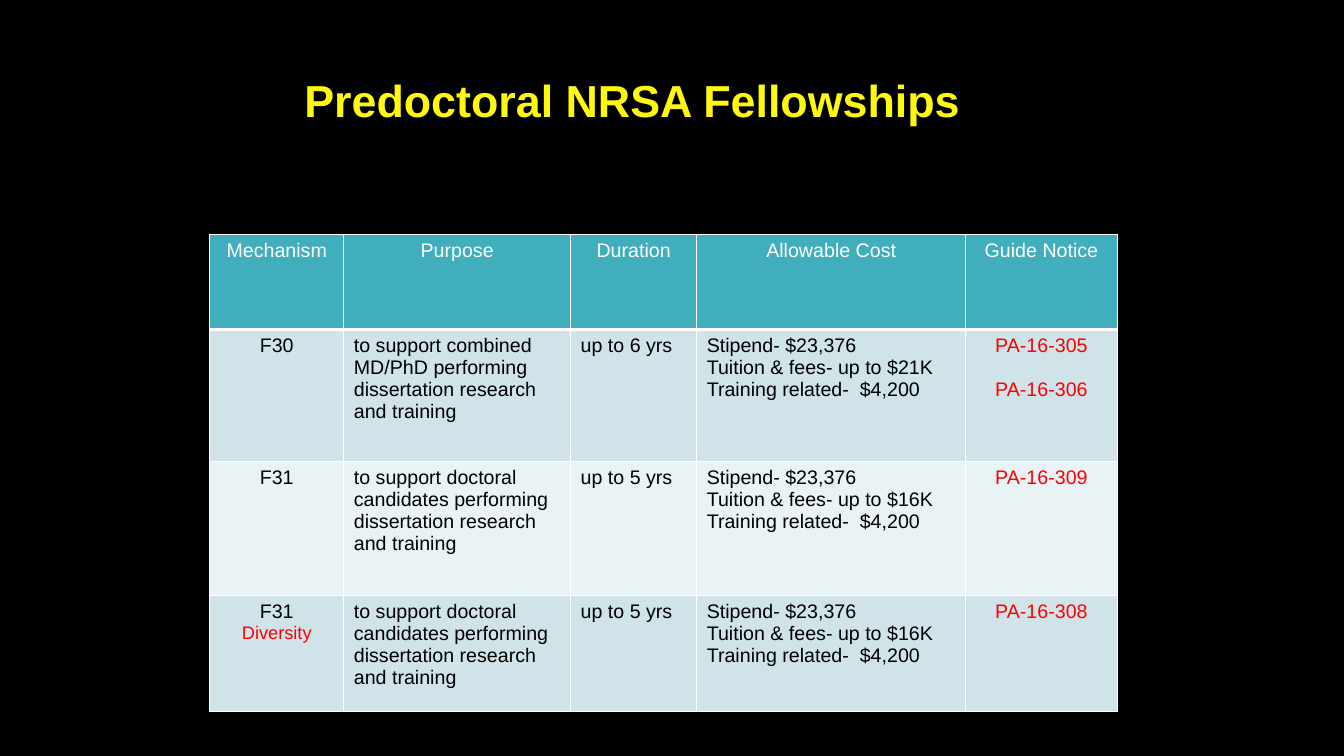
from lxml import etree
from pptx import Presentation
from pptx.dml.color import RGBColor
from pptx.enum import text
from pptx.oxml.ns import qn
from pptx.util import Inches, Pt

COLORS = {
    "background": "000000", "title": "FEF80E", "header": "41AEBD",
    "odd_row": "CFE3E8", "even_row": "E9F2F4",
    "white": "FFFFFF", "black": "000000", "red": "FF0000",
}
COLUMN_WIDTHS = [1.33, 2.25, 1.25, 2.67, 1.5]
ROW_HEIGHTS = [0.94, 1.31, 1.33, 1.15]
HEADINGS = ["Mechanism", "Purpose", "Duration", "Allowable Cost", "Guide Notice"]
CENTERED_COLUMNS = (0, 4)
NOTICE_COLUMN = 4

# mechanism lines, trainees, years, tuition limit, guide notices
FELLOWSHIPS = [
    (["F30"], "combined MD/PhD", 6, 21, ["PA-16-305", "PA-16-306"]),
    (["F31"], "doctoral candidates", 5, 16, ["PA-16-309"]),
    (["F31", "Diversity"], "doctoral candidates", 5, 16, ["PA-16-308"]),
]


def write(paragraph, words, color, size=14, bold=False):
    run = paragraph.add_run()
    run.text = words
    for name, value in {"name": "Arial", "size": Pt(size), "bold": bold}.items():
        setattr(run.font, name, value)
    run.font.color.rgb = RGBColor.from_string(COLORS[color])


def format_cell(cell, fill, bottom_width):
    """Give the cell white borders and a solid fill."""
    properties = cell._tc.get_or_add_tcPr()
    for side, width in {"L": 1, "R": 1, "T": 1, "B": bottom_width}.items():
        line = etree.SubElement(properties, qn(f"a:ln{side}"), w=str(Pt(width)))
        solid = etree.SubElement(line, qn("a:solidFill"))
        etree.SubElement(solid, qn("a:srgbClr"), val=COLORS["white"])
    cell.fill.solid()
    cell.fill.fore_color.rgb = RGBColor.from_string(COLORS[fill])


presentation = Presentation()
presentation.slide_width = Inches(13.33)
presentation.slide_height = Inches(7.5)
slide = presentation.slides.add_slide(presentation.slide_layouts[6])
slide.background.fill.solid()
slide.background.fill.fore_color.rgb = RGBColor.from_string(COLORS["background"])

title = slide.shapes.add_textbox(Inches(2.92), Inches(0.67), Inches(7.5), Inches(0.64))
title.text_frame.word_wrap = True
write(title.text_frame.paragraphs[0], "Predoctoral NRSA Fellowships", "title", 32, True)

table = slide.shapes.add_table(
    len(ROW_HEIGHTS), len(COLUMN_WIDTHS), Inches(2.08), Inches(2.33),
    Inches(sum(COLUMN_WIDTHS)), Inches(sum(ROW_HEIGHTS))).table
for column, width in zip(table.columns, COLUMN_WIDTHS):
    column.width = Inches(width)
for row, height in zip(table.rows, ROW_HEIGHTS):
    row.height = Inches(height)

for cell, heading in zip(table.rows[0].cells, HEADINGS):
    format_cell(cell, "header", 3)
    paragraph = cell.text_frame.paragraphs[0]
    paragraph.alignment = text.PP_ALIGN.CENTER
    write(paragraph, heading, "white")

for row_number, fellowship in enumerate(FELLOWSHIPS, start=1):
    mechanism, trainees, years, tuition, notices = fellowship
    contents = [
        mechanism,
        [f"to support {trainees} performing dissertation research and training"],
        [f"up to {years} yrs"],
        ["Stipend- $23,376", f"Tuition & fees- up to ${tuition}K",
         "Training related-  $4,200"],
        notices,
    ]
    for column_number, lines in enumerate(contents):
        cell = table.cell(row_number, column_number)
        format_cell(cell, "odd_row" if row_number % 2 else "even_row", 1)
        for line_number, words in enumerate(lines):
            frame = cell.text_frame
            paragraph = frame.add_paragraph() if line_number else frame.paragraphs[0]
            if column_number in CENTERED_COLUMNS:
                paragraph.alignment = text.PP_ALIGN.CENTER
            if column_number == NOTICE_COLUMN and line_number:
                paragraph.space_before = Pt(15.7)
            is_diversity = words == "Diversity"
            is_red = is_diversity or column_number == NOTICE_COLUMN
            write(paragraph, words, "red" if is_red else "black",
                  13 if is_diversity else 14)

presentation.save("out.pptx")
